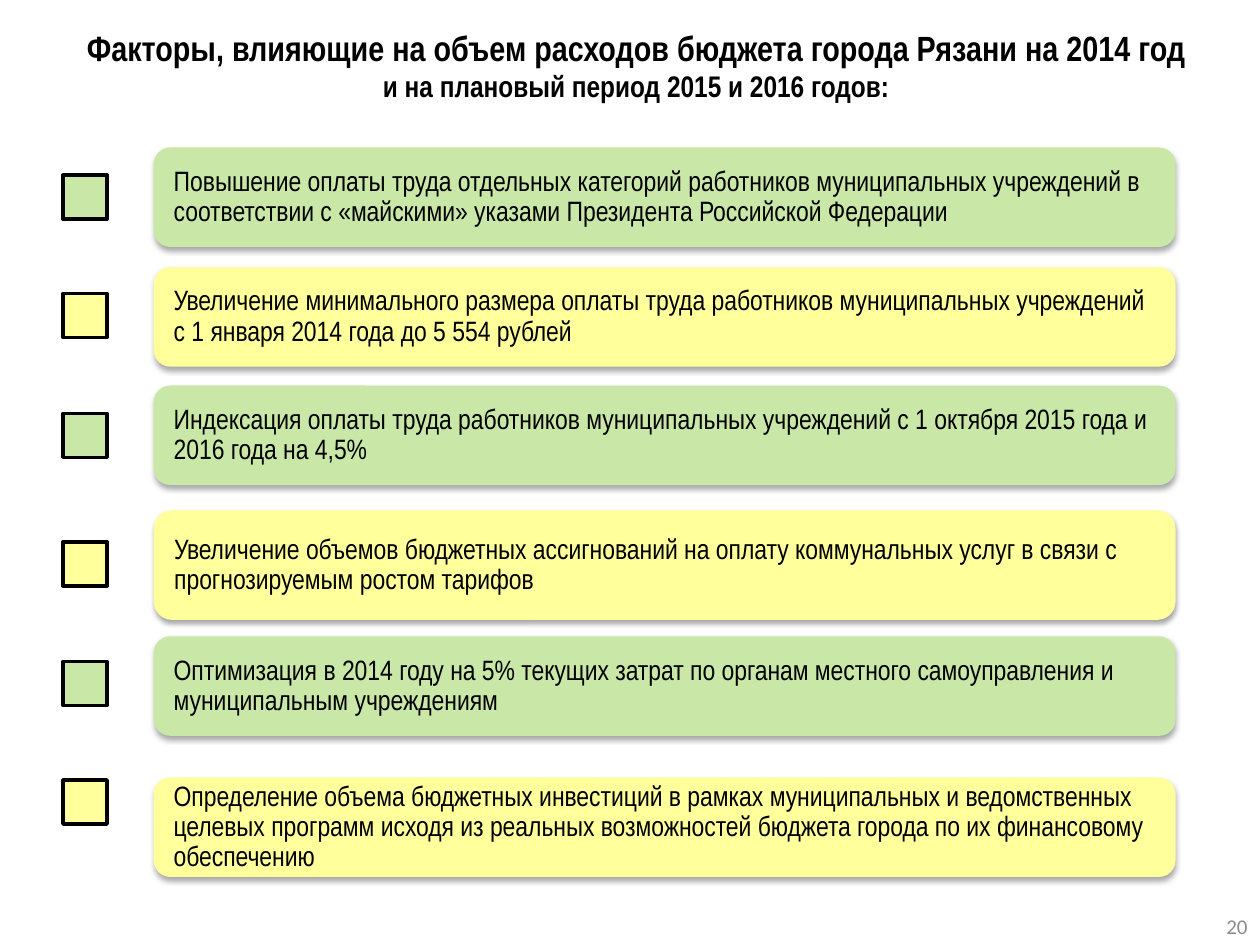
from lxml import etree
from pptx import Presentation, util as u
from pptx.dml.color import RGBColor
from pptx.enum import shapes, text
from pptx.oxml import ns

GREEN, YELLOW, BLACK, GREY = "C9E7A7", "FFFF9B", "000000", "8C8C8C"
CARD_LEFT, CARD_WIDTH = 1.22, 8.11
MARKER_LEFT, MARKER_SIZE = 0.5, 0.35

# Card top, card height, marker top, wording
factors = [
    (1.17, 0.79, 1.39, "Повышение оплаты труда отдельных категорий работников муниципальных "
     "учреждений в соответствии с «майскими» указами Президента Российской Федерации"),
    (2.12, 0.79, 2.33, "Увеличение минимального размера оплаты труда работников муниципальных "
     "учреждений с 1 января 2014 года до 5 554 рублей"),
    (3.06, 0.79, 3.28, "Индексация оплаты труда работников муниципальных учреждений "
     "с 1 октября 2015 года и 2016 года на 4,5%"),
    (4.05, 0.87, 4.3, "Увеличение объемов бюджетных ассигнований на оплату коммунальных услуг "
     "в связи с прогнозируемым ростом тарифов"),
    (5.05, 0.79, 5.25, "Оптимизация в 2014 году на 5% текущих затрат по органам местного "
     "самоуправления и муниципальным учреждениям"),
    (6.17, 0.79, 6.19, "Определение объема бюджетных инвестиций в рамках муниципальных и "
     "ведомственных целевых программ исходя из реальных возможностей бюджета города "
     "по их финансовому обеспечению"),
]


def color(value):
    return RGBColor.from_string(value)


def add_span(para, wording, size, font="Arial Narrow", ink=BLACK, bold=False):
    span = para.add_run()
    span.text = wording
    span.font.size = u.Pt(size)
    span.font.name = font
    span.font.bold = bold
    span.font.color.rgb = color(ink)


deck = Presentation()
deck.slide_width, deck.slide_height = u.Inches(10), u.Inches(7.5)
page = deck.slides.add_slide(deck.slide_layouts[6])

# Factor cards with their colour markers
for index, (top, height, marker_top, wording) in enumerate(factors):
    fill = YELLOW if index % 2 else GREEN

    card = page.shapes.add_shape(
        shapes.MSO_SHAPE.ROUNDED_RECTANGLE, u.Inches(CARD_LEFT), u.Inches(top),
        u.Inches(CARD_WIDTH), u.Inches(height))
    card.fill.solid()
    card.fill.fore_color.rgb = color(fill)
    card.line.fill.background()

    # Soft shadow straight below the card
    card.shadow.inherit = False
    effects = card.element.spPr.find(ns.qn("a:effectLst"))
    shadow = etree.SubElement(
        effects, ns.qn("a:outerShdw"), blurRad=str(u.Pt(3.1)), dist=str(u.Pt(1.8)),
        dir="5400000", rotWithShape="0")
    shade = etree.SubElement(shadow, ns.qn("a:srgbClr"), val=BLACK)
    etree.SubElement(shade, ns.qn("a:alpha"), val="35000")

    frame = card.text_frame
    frame.word_wrap = True
    frame.vertical_anchor = text.MSO_ANCHOR.MIDDLE
    frame.margin_left = frame.margin_right = u.Inches(0.12)
    frame.margin_top = frame.margin_bottom = u.Inches(0.12)
    para = frame.paragraphs[0]
    para.alignment = text.PP_ALIGN.LEFT
    para.line_spacing = 0.9
    add_span(para, wording, 16)

    marker = page.shapes.add_shape(
        shapes.MSO_SHAPE.RECTANGLE, u.Inches(MARKER_LEFT), u.Inches(marker_top),
        u.Inches(MARKER_SIZE), u.Inches(MARKER_SIZE))
    marker.shadow.inherit = False
    marker.fill.solid()
    marker.fill.fore_color.rgb = color(fill)
    marker.line.color.rgb = color(BLACK)
    marker.line.width = u.Pt(2)

# Title
box = page.shapes.add_textbox(u.Inches(0.55), u.Inches(0.2), u.Inches(9), u.Inches(0.63))
box.text_frame.word_wrap = True
box.text_frame.vertical_anchor = text.MSO_ANCHOR.MIDDLE
para = box.text_frame.paragraphs[0]
para.alignment = text.PP_ALIGN.CENTER
add_span(para, "Факторы, влияющие на объем расходов бюджета города Рязани на 2014 год", 20, bold=True)
para.add_line_break()
add_span(para, "и на плановый период 2015 и 2016 годов:", 17, bold=True)

# Page number
box = page.shapes.add_textbox(u.Inches(7.67), u.Inches(7.15), u.Inches(2.33), u.Inches(0.4))
box.text_frame.word_wrap = True
box.text_frame.vertical_anchor = text.MSO_ANCHOR.MIDDLE
para = box.text_frame.paragraphs[0]
para.alignment = text.PP_ALIGN.RIGHT
add_span(para, "20", 12, font="Calibri", ink=GREY)

deck.save("out.pptx")
